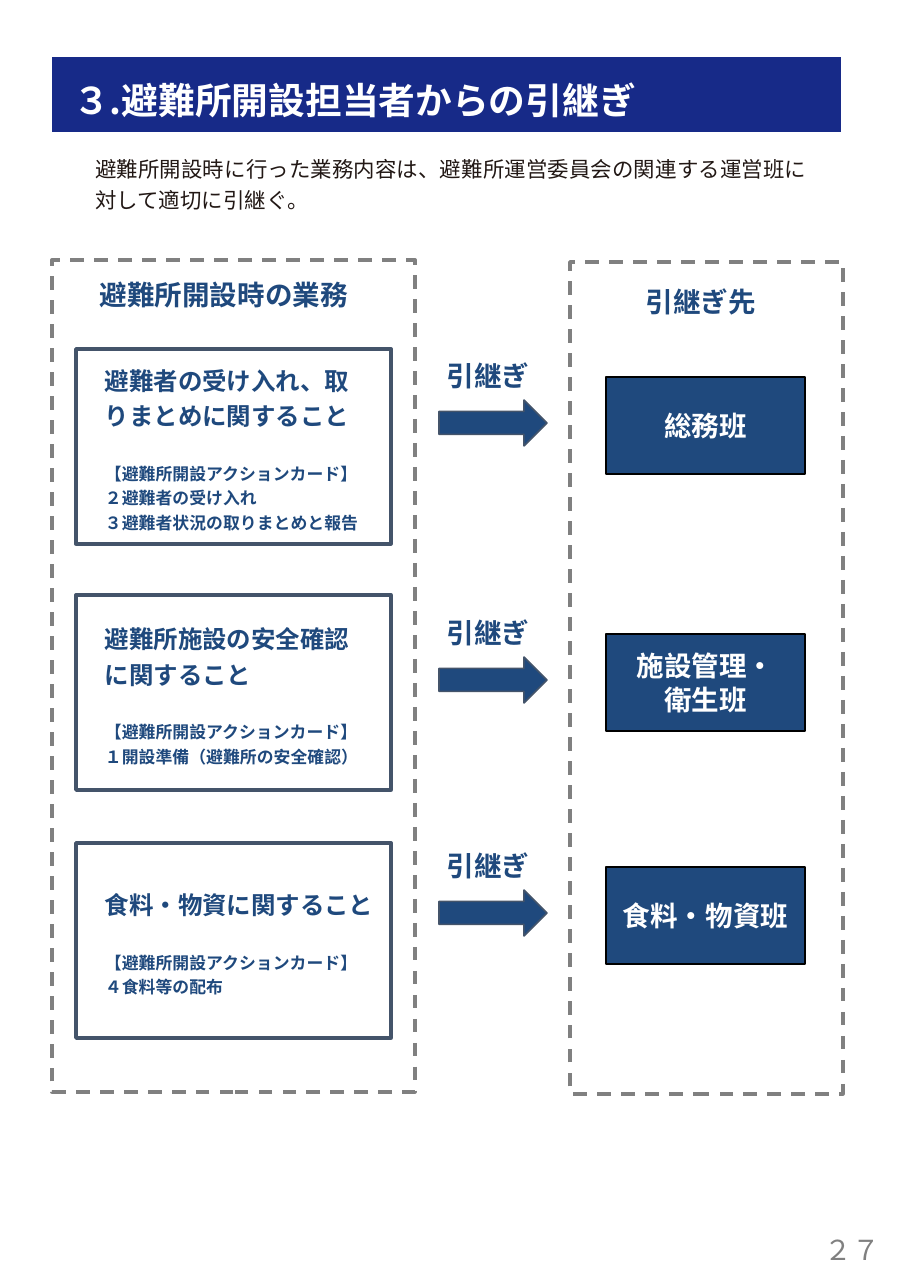
from lxml import etree
from pptx import Presentation
from pptx import util as u
from pptx.dml.color import RGBColor
from pptx.enum import dml, shapes, text
from pptx.oxml import ns

PX = 8298  # EMU per pixel
NAVY = RGBColor(0x17, 0x2A, 0x88)
BLUE = RGBColor(0x1F, 0x49, 0x7D)
SLATE = RGBColor(0x44, 0x54, 0x6A)
GRAY = RGBColor(0x80, 0x80, 0x80)
INK = RGBColor(0x22, 0x18, 0x15)
BLACK = RGBColor(0, 0, 0)
WHITE = RGBColor(255, 255, 255)
CJK = "Noto Sans CJK JP"
LEFT, CENTER = text.PP_ALIGN.LEFT, text.PP_ALIGN.CENTER


def write(tf, lines, size=18, color=BLUE, align=LEFT, bold=True, font=CJK):
    """Fill a text frame with one paragraph per line, in Latin and East Asian font."""
    tf.word_wrap = True
    tf.text = "\n".join(lines)
    for p in tf.paragraphs:
        p.alignment = align
        r = p.runs[0]
        r.font.size, r.font.bold, r.font.name = u.Pt(size), bold, font
        r.font.color.rgb = color
        ea = etree.SubElement(r.font._element, ns.qn("a:ea"))
        ea.set("typeface", font)


def add_box(kind, x, y, w, h, fill, line, width):
    sp = s.shapes.add_shape(kind, x * PX, y * PX, w * PX, h * PX)
    sp.shadow.inherit = False
    if fill is None:
        sp.fill.background()
    else:
        sp.fill.solid()
        sp.fill.fore_color.rgb = fill
    sp.line.color.rgb = line
    sp.line.width = u.Pt(width)
    return sp


prs = Presentation()
prs.slide_width, prs.slide_height = 911 * PX, 1288 * PX
s = prs.slides.add_slide(prs.slide_layouts[1])

# Title banner and lead sentence
title, lead = s.shapes.title, s.placeholders[1]
for sp, (x, y, w, h) in ((title, (52, 57, 789, 75)), (lead, (95, 151, 712, 64))):
    sp.left, sp.top, sp.width, sp.height = x * PX, y * PX, w * PX, h * PX
    tf = sp.text_frame
    tf.auto_size = text.MSO_AUTO_SIZE.NONE
    tf.margin_left = tf.margin_right = tf.margin_top = tf.margin_bottom = 0

title.fill.solid()
title.fill.fore_color.rgb = NAVY
title.text_frame.margin_left = 21 * PX
title.text_frame.margin_top = 10 * PX
title.text_frame.vertical_anchor = text.MSO_ANCHOR.MIDDLE
write(title.text_frame, ["３.避難所開設担当者からの引継ぎ"], 24, WHITE)

write(lead.text_frame,
      ["避難所開設時に行った業務内容は、避難所運営委員会の関連する運営班に対して適切に引継ぐ。"],
      14, INK, text.PP_ALIGN.JUSTIFY, False)
p = lead.text_frame.paragraphs[0]
p.line_spacing, p.space_before = 1.2, u.Pt(0)
pPr = p._p.get_or_add_pPr()
pPr.set("marL", "0")
pPr.set("indent", "0")
etree.SubElement(pPr, ns.qn("a:buNone"))

# Dashed columns
for x, y, w in ((52, 260, 363), (570, 262, 273)):
    frame = add_box(shapes.MSO_SHAPE.RECTANGLE, x, y, w, 832, None, GRAY, 2.25)
    frame.line.dash_style = dml.MSO_LINE.DASH

# Task card, arrow and receiving team: card top, right inset, team top, texts
CARD_NOTE = "【避難所開設アクションカード】"
handovers = [
    (349, 26, 377, ["避難者の受け入れ、取りまとめに関すること", CARD_NOTE,
                    "２避難者の受け入れ", "３避難者状況の取りまとめと報告"], ["総務班"]),
    (595, 26, 634, ["避難所施設の安全確認に関すること", CARD_NOTE,
                    "１開設準備（避難所の安全確認）"], ["施設管理・", "衛生班"]),
    (843, 9, 867, ["食料・物資に関すること", CARD_NOTE, "４食料等の配布"], ["食料・物資班"]),
]
labels = [(89, 273, 316, "避難所開設時の業務"), (635, 280, 174, "引継ぎ先")]

for card_top, inset, team_top, task, team in handovers:
    card = add_box(shapes.MSO_SHAPE.RECTANGLE, 76, card_top, 315, 195, None, SLATE, 2.25)
    tf = card.text_frame
    tf.margin_left, tf.margin_right = 29 * PX, inset * PX
    tf.margin_top = tf.margin_bottom = 0
    tf.vertical_anchor = text.MSO_ANCHOR.MIDDLE
    write(tf, task, 11)
    for p in tf.paragraphs:
        p.line_spacing = 1.2
    tf.paragraphs[0].runs[0].font.size = u.Pt(16)
    tf.paragraphs[1].space_before = u.Pt(19)

    add_box(shapes.MSO_SHAPE.RIGHT_ARROW, 439, team_top + 23, 108, 46, BLUE, SLATE, 1)
    labels.append((436, team_top - 23, 111, "引継ぎ"))

    box = add_box(shapes.MSO_SHAPE.RECTANGLE, 606, team_top, 199, 97, BLUE, BLACK, 1)
    box.text_frame.vertical_anchor = text.MSO_ANCHOR.MIDDLE
    write(box.text_frame, team, 18, WHITE, CENTER)

for x, y, w, label in labels:
    tb = s.shapes.add_textbox(x * PX, y * PX, w * PX, 44 * PX)
    write(tb.text_frame, [label])

page = s.shapes.add_textbox(813 * PX, 1228 * PX, 79 * PX, 44 * PX)
write(page.text_frame, ["２７"], 18, GRAY, CENTER, False, "Arial")

prs.save("out.pptx")
